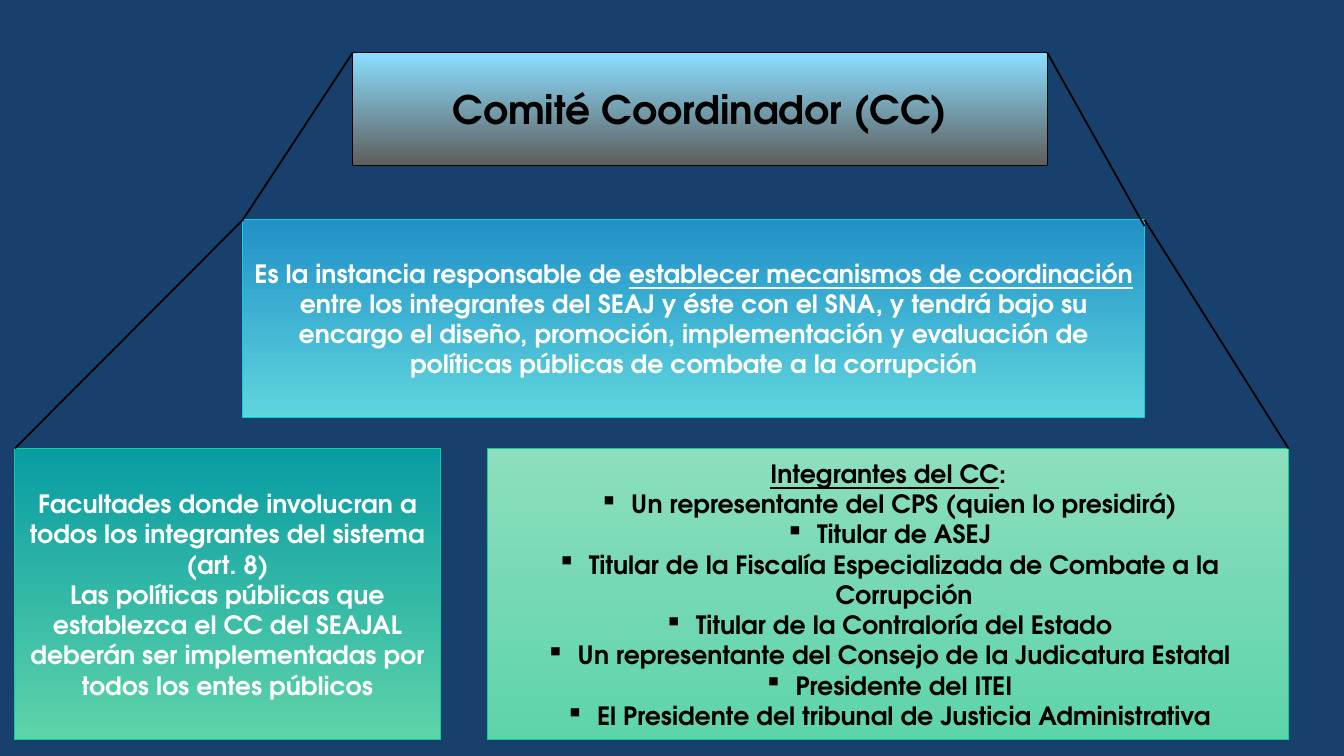
from lxml import etree
from pptx import Presentation
from pptx import util as u
from pptx.dml.color import RGBColor
from pptx.enum import shapes, text
from pptx.oxml import ns

HUES = {
    "back": "17406D", "black": "000000", "white": "FFFFFF",
    "sky": "8ADFFF", "gray": "5E5E5E",
    "blue": "2191C9", "aqua": "5ED5DD", "cyan": "0BD0D9",
    "teal": "089CA3", "mint": "8CDEBD", "green": "5ED4A9", "edge": "10CF9B",
}


class Chart:
    """Draw the boxes and lines of the committee slide in one style."""

    def __init__(self, slide, font="TeX Gyre Adventor"):
        self.slide = slide
        self.font = font
        fill = slide.background.fill
        fill.solid()
        fill.fore_color.rgb = self.hue("back")

    def hue(self, name):
        return RGBColor.from_string(HUES[name])

    def box(self, area, fade, edge, ink, lines, size=18, dots=False):
        shape = self.slide.shapes.add_shape(
            shapes.MSO_SHAPE.RECTANGLE, *[u.Pt(n) for n in area])
        shape.shadow.inherit = False
        shape.fill.gradient()
        shape.fill.gradient_angle = 270
        for stop, name in zip(shape.fill.gradient_stops, fade):
            stop.color.rgb = self.hue(name)
        shape.line.color.rgb = self.hue(edge)
        shape.line.width = u.Pt(0.75)
        frame = shape.text_frame
        frame.word_wrap = True
        frame.vertical_anchor = text.MSO_ANCHOR.MIDDLE
        for i, line in enumerate(lines):
            para = frame.add_paragraph() if i else frame.paragraphs[0]
            self.label(para, line, ink, size)
            if dots and i:
                self.dot(para)
        return shape

    def label(self, para, line, ink, size):
        para.alignment = text.PP_ALIGN.CENTER
        for i, part in enumerate(line.split("_")):
            if not part:
                continue
            run = para.add_run()
            run.text = part
            font = run.font
            font.name, font.size, font.bold = self.font, u.Pt(size), True
            font.color.rgb = self.hue(ink)
            font.underline = i % 2 == 1

    def dot(self, para):
        props = para._p.get_or_add_pPr()
        props.set("marL", str(u.Pt(22.5)))
        props.set("indent", str(-u.Pt(22.5)))
        etree.SubElement(props, ns.qn("a:buChar")).set("char", "▪")

    def line(self, start, end):
        link = self.slide.shapes.add_connector(
            shapes.MSO_CONNECTOR.STRAIGHT, *start, *end)
        link.line.color.rgb = self.hue("black")
        link.line.width = u.Pt(1.25)
        etree.SubElement(link._element.spPr, ns.qn("a:effectLst"))


def left(box):
    return box.left, box.top


def right(box, drop=0):
    return box.left + box.width, box.top + u.Pt(drop)


def main():
    deck = Presentation()
    deck.slide_width, deck.slide_height = u.Pt(960), u.Pt(540)
    chart = Chart(deck.slides.add_slide(deck.slide_layouts[6]))

    title = chart.box((252, 37.5, 496, 80.5), ("sky", "gray"), "black", "black",
                      ["Comité Coordinador (CC)"], size=28)
    role = chart.box((173.5, 157, 644, 141), ("blue", "aqua"), "cyan", "white", [
        "Es la instancia responsable de _establecer mecanismos de coordinación _"
        "entre los integrantes del SEAJ y éste con el SNA, y tendrá bajo su "
        "encargo el diseño, promoción, implementación y evaluación de "
        "políticas públicas de combate a la corrupción"])
    powers = chart.box((10.5, 320.5, 304, 208), ("teal", "green"), "edge", "white", [
        "Facultades donde involucran a todos los integrantes del sistema (art. 8)",
        "Las políticas públicas que establezca el CC del SEAJAL deberán ser "
        "implementadas por todos los entes públicos"])
    members = chart.box((348.5, 320.5, 572, 208), ("mint", "green"), "edge", "black", [
        "_Integrantes del CC_:",
        "Un representante del CPS (quien lo presidirá)",
        "Titular de ASEJ",
        "Titular de la Fiscalía Especializada de Combate a la Corrupción",
        "Titular de la Contraloría del Estado",
        "Un representante del Consejo de la Judicatura Estatal",
        "Presidente del ITEI",
        "El Presidente del tribunal de Justicia Administrativa"], dots=True)

    chart.line(left(title), left(role))
    chart.line(left(role), left(powers))
    chart.line(right(title), right(role, 4.5))
    chart.line(right(role), right(members))
    deck.save("out.pptx")


if __name__ == "__main__":
    main()
